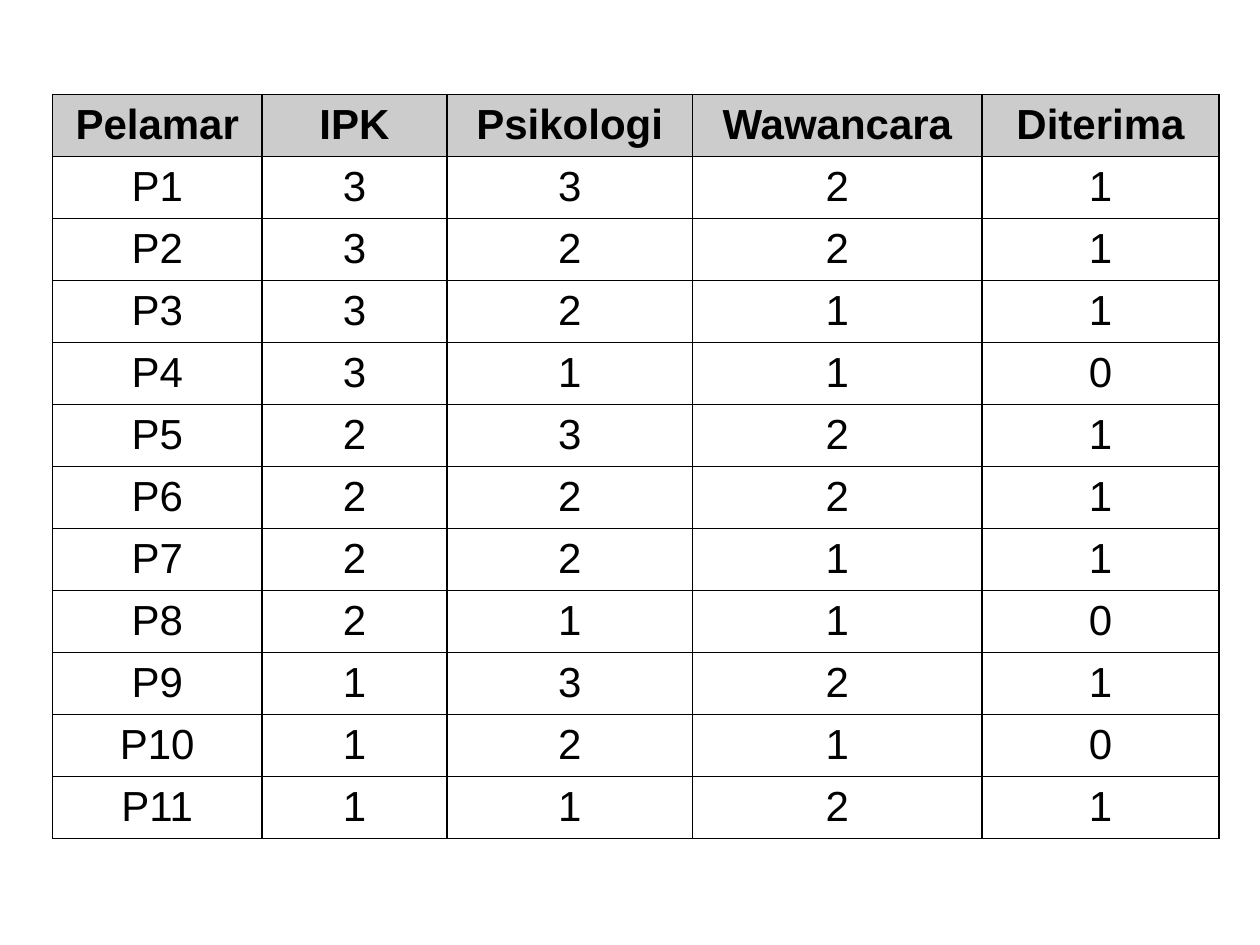
from lxml.etree import SubElement
from pptx import Presentation
from pptx.dml.color import RGBColor
from pptx.enum.text import MSO_ANCHOR as Anchor, PP_ALIGN as Align
from pptx.oxml.ns import qn
from pptx.util import Cm, Pt

# Content
HEADS = ["Pelamar", "IPK", "Psikologi", "Wawancara", "Diterima"]
SCORES = [
    (3, 3, 2, 1),
    (3, 2, 2, 1),
    (3, 2, 1, 1),
    (3, 1, 1, 0),
    (2, 3, 2, 1),
    (2, 2, 2, 1),
    (2, 2, 1, 1),
    (2, 1, 1, 0),
    (1, 3, 2, 1),
    (1, 2, 1, 0),
    (1, 1, 2, 1),
]
ROWS = [HEADS] + [[f"P{n}", *marks] for n, marks in enumerate(SCORES, 1)]

# Layout and style
LEFT, TOP = 1.06, 1.9
WIDTHS = [4.22, 3.73, 4.95, 5.84, 4.77]
HEIGHT = 1.25
FONT = "Arial"
BLACK = RGBColor(0x00, 0x00, 0x00)
GREY = RGBColor(0xCC, 0xCC, 0xCC)


def add_edges(cell):
    """Draw a thin line on all four sides; call before setting the fill."""
    props = cell._tc.get_or_add_tcPr()
    for side in ("lnL", "lnR", "lnT", "lnB"):
        line = SubElement(props, qn(f"a:{side}"), w=str(Pt(1)))
        paint = SubElement(line, qn("a:solidFill"))
        SubElement(paint, qn("a:srgbClr"), val=str(BLACK))


def fill_cell(cell, text, head):
    add_edges(cell)
    if head:
        cell.fill.solid()
        cell.fill.fore_color.rgb = GREY
    else:
        cell.fill.background()
    cell.vertical_anchor = Anchor.MIDDLE
    cell.margin_left = cell.margin_right = Cm(0.18)
    cell.margin_top = cell.margin_bottom = Cm(0)
    para = cell.text_frame.paragraphs[0]
    para.alignment = Align.CENTER
    run = para.add_run()
    run.text = str(text)
    font = run.font
    font.name, font.size, font.bold = FONT, Pt(24), head
    font.color.rgb = BLACK


def main():
    deck = Presentation()
    deck.slide_width, deck.slide_height = Cm(25.4), Cm(19.05)
    slide = deck.slides.add_slide(deck.slide_layouts[6])

    # Applicant table
    table = slide.shapes.add_table(
        len(ROWS), len(HEADS), Cm(LEFT), Cm(TOP),
        Cm(sum(WIDTHS)), Cm(HEIGHT * len(ROWS))).table
    table.horz_banding = False
    for col, width in zip(table.columns, WIDTHS):
        col.width = Cm(width)
    for r, values in enumerate(ROWS):
        table.rows[r].height = Cm(HEIGHT)
        for c, value in enumerate(values):
            fill_cell(table.cell(r, c), value, r == 0)

    deck.save("out.pptx")


if __name__ == "__main__":
    main()
